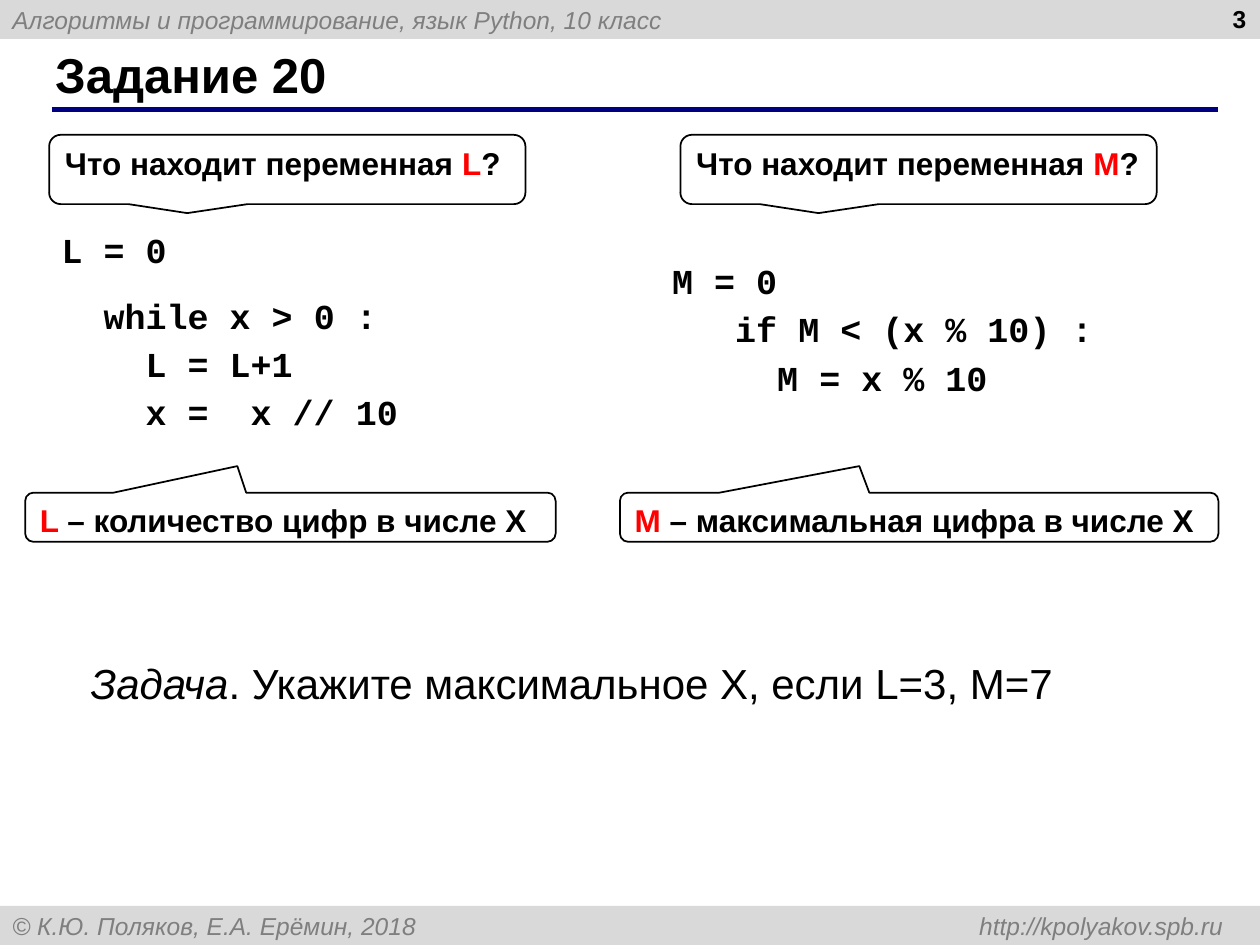
from lxml import etree
from pptx import Presentation
from pptx import util as u
from pptx.dml.color import RGBColor
from pptx.enum import shapes as sh, text as tx
from pptx.oxml import parse_xml
from pptx.oxml.ns import nsdecls, qn

BLACK, RED, GRAY, PALE, NAVY = "000000", "FF0000", "7F7F7F", "D9D9D9", "000080"
CHAR = 0.1667
SHADE = (
    f'<a:effectLst {nsdecls("a")}><a:outerShdw blurRad="38100" dist="38100" '
    'dir="2700000" algn="tl"><a:srgbClr val="000000"><a:alpha val="43000"/>'
    '</a:srgbClr></a:outerShdw></a:effectLst>'
)


def paint(target, color):
    if hasattr(target, "solid"):
        target.solid()
        target = target.fore_color
    target.rgb = RGBColor.from_string(color)


def write(para, words, size=18, font="Arial", color=BLACK, bold=False,
          italic=False, shade=False):
    run = para.add_run()
    run.text = words
    face = run.font
    face.size, face.name, face.bold, face.italic = u.Pt(size), font, bold, italic
    paint(face.fill, color)
    if shade:
        fill = run._r.get_or_add_rPr().find(qn("a:solidFill"))
        fill.addnext(parse_xml(SHADE))


def indent(para, left, first=0):
    props = para._p.get_or_add_pPr()
    props.set("marL", str(u.Inches(left)))
    props.set("indent", str(u.Inches(first)))


def box(slide, left, top, width, height, middle=False):
    item = slide.shapes.add_textbox(*map(u.Inches, (left, top, width, height)))
    frame = item.text_frame
    frame.word_wrap = True
    if middle:
        frame.vertical_anchor = tx.MSO_ANCHOR.MIDDLE
    return frame


def shape(slide, kind, left, top, width, height):
    item = slide.shapes.add_shape(kind, *map(u.Inches, (left, top, width, height)))
    item.shadow.inherit = False
    item.text_frame.word_wrap = True
    item.text_frame.paragraphs[0].alignment = tx.PP_ALIGN.LEFT
    return item


def band(slide, top, words):
    item = shape(slide, sh.MSO_SHAPE.RECTANGLE, 0, top, 10, 0.31)
    paint(item.fill, PALE)
    item.line.fill.background()
    item.text_frame.vertical_anchor = tx.MSO_ANCHOR.MIDDLE
    para = item.text_frame.paragraphs[0]
    write(para, words, size=14, color=GRAY, italic=True)
    return para


def tab(para, pos):
    stops = etree.SubElement(para._p.get_or_add_pPr(), qn("a:tabLst"))
    etree.SubElement(stops, qn("a:tab"), pos=str(u.Inches(pos)), algn="r")


def rule(slide, left, right, top):
    line = slide.shapes.add_connector(
        sh.MSO_CONNECTOR.STRAIGHT, *map(u.Inches, (left, top, right, top)))
    line.line.width = u.Pt(3)
    paint(line.line.fill, NAVY)
    etree.SubElement(line._element.spPr, qn("a:effectLst"))


def code(slide, place, lines, gap=0):
    frame = box(slide, *place, middle=True)
    for num, (depth, words) in enumerate(lines):
        para = frame.add_paragraph() if num else frame.paragraphs[0]
        para.line_spacing = 1.15
        if num == 0 and gap:
            para.space_after = u.Pt(gap)
        indent(para, depth * CHAR)
        write(para, words, size=20, font="Courier New", bold=True, shade=True)


def callout(slide, place, parts, tip=(-0.21, 0.63)):
    item = shape(slide, sh.MSO_SHAPE.ROUNDED_RECTANGULAR_CALLOUT, *place)
    item.adjustments[0], item.adjustments[1] = tip
    item.fill.background()
    item.line.width = u.Pt(1)
    paint(item.line.fill, BLACK)
    item.text_frame.vertical_anchor = tx.MSO_ANCHOR.TOP
    for words, color in parts:
        write(item.text_frame.paragraphs[0], words, color=color, bold=True)


def main():
    deck = Presentation()
    deck.slide_width, deck.slide_height = u.Inches(10), u.Inches(7.5)
    slide = deck.slides.add_slide(deck.slide_layouts[6])

    band(slide, 0, "Алгоритмы и программирование, язык Python, 10 класс")
    foot = band(slide, 7.19, "© К.Ю. Поляков, Е.А. Ерёмин, 2018\thttp://kpolyakov.spb.ru")
    tab(foot, 9.61)
    page = box(slide, 7.66, -0.02, 2.33, 0.52).paragraphs[0]
    page.alignment = tx.PP_ALIGN.RIGHT
    write(page, "3", size=14, bold=True)
    rule(slide, 0.41, 9.67, 0.87)
    title = box(slide, 0.34, 0.33, 9.16, 0.52, middle=True)
    write(title.paragraphs[0], "Задание 20", size=28, bold=True)

    code(slide, (0.39, 1.71, 4.02, 1.78),
         [(0, "L = 0"), (2, "while x > 0 :"), (4, "L = L+1"), (4, "x =  x // 10")],
         gap=10)
    code(slide, (5.07, 1.96, 4.6, 1.25),
         [(1, "M = 0"), (4, "if M < (x % 10) :"), (6, "M = x % 10")])

    for left, name in ((0.39, "L"), (5.4, "M")):
        callout(slide, (left, 1.07, 3.78, 0.55),
                [("Что находит переменная ", BLACK), (name, RED), ("?", BLACK)])
    for left, width, name, sense in (
            (0.2, 4.21, "L ", "– количество цифр в числе Х"),
            (4.92, 4.75, "М ", "– максимальная цифра в числе Х")):
        callout(slide, (left, 3.91, width, 0.39),
                [(name, RED), (sense, BLACK)], tip=(-0.1, -1.04))

    task = box(slide, 0.62, 5.17, 8.89, 0.51).paragraphs[0]
    indent(task, 0.4, -0.4)
    write(task, "Задача", size=24, italic=True)
    write(task, ". Укажите максимальное Х, если L=3, M=7", size=24)
    deck.save("out.pptx")


if __name__ == "__main__":
    main()
